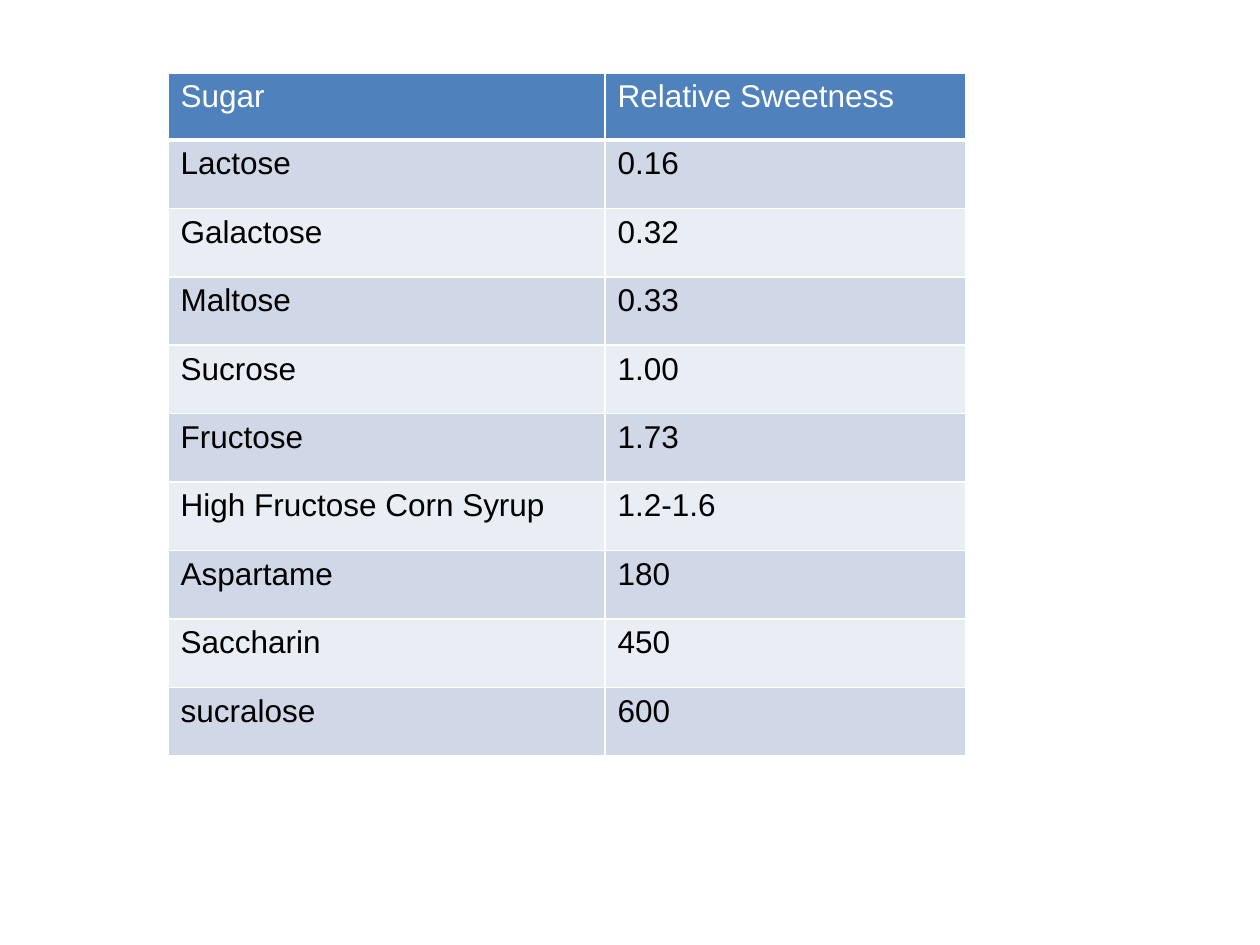
from lxml import etree
from pptx import Presentation
from pptx.dml.color import RGBColor
from pptx.oxml.ns import qn
from pptx.util import Emu, Pt

HEADER = ("Sugar", "Relative Sweetness")
SUGARS = [
    ("Lactose", "0.16"),
    ("Galactose", "0.32"),
    ("Maltose", "0.33"),
    ("Sucrose", "1.00"),
    ("Fructose", "1.73"),
    ("High Fructose Corn Syrup", "1.2-1.6"),
    ("Aspartame", "180"),
    ("Saccharin", "450"),
    ("sucralose", "600"),
]
COLORS = {
    "header": "4F81BD",
    "odd": "D0D8E8",
    "even": "E9EDF4",
    "white": "FFFFFF",
    "black": "000000",
}
FONT = {"name": "Arial", "size": Pt(18), "bold": False}

PX = 914400 // 126
LEFT, TOP, HEIGHT = 168, 73, 683
COLUMN_WIDTHS = (437, 361)
HEADER_HEIGHT = 67
BLANK_LAYOUT = 6


def px(length):
    return Emu(round(length * PX))


def add_borders(cell, bottom):
    """Draw white cell edges, 1 pt wide except for the given bottom width."""
    properties = cell._tc.get_or_add_tcPr()
    for edge, width in (("L", 1), ("R", 1), ("T", 1), ("B", bottom)):
        line = etree.SubElement(properties, qn(f"a:ln{edge}"), w=str(Pt(width)))
        fill = etree.SubElement(line, qn("a:solidFill"))
        etree.SubElement(fill, qn("a:srgbClr"), val=COLORS["white"])


def fill_cell(cell, text, fill, color, bottom):
    add_borders(cell, bottom)
    cell.fill.solid()
    cell.fill.fore_color.rgb = RGBColor.from_string(COLORS[fill])
    span = cell.text_frame.paragraphs[0].add_run()
    span.text = text
    for name, value in FONT.items():
        setattr(span.font, name, value)
    span.font.color.rgb = RGBColor.from_string(COLORS[color])


def add_sugar_table(page):
    rows = [HEADER, *SUGARS]
    frame = page.shapes.add_table(
        len(rows), len(HEADER), px(LEFT), px(TOP), px(sum(COLUMN_WIDTHS)), px(HEIGHT)
    )
    table = frame.table
    for column, width in zip(table.columns, COLUMN_WIDTHS):
        column.width = px(width)
    body_height = (HEIGHT - HEADER_HEIGHT) / len(SUGARS)
    for index, texts in enumerate(rows):
        table.rows[index].height = px(body_height if index else HEADER_HEIGHT)
        if index == 0:
            look = ("header", "white", 3)
        else:
            look = ("odd" if index % 2 else "even", "black", 1)
        for cell, text in zip(table.rows[index].cells, texts):
            fill_cell(cell, text, *look)


def main():
    deck = Presentation()
    deck.slide_width, deck.slide_height = px(1260), px(945)
    page = deck.slides.add_slide(deck.slide_layouts[BLANK_LAYOUT])
    add_sugar_table(page)
    deck.save("out.pptx")


if __name__ == "__main__":
    main()
